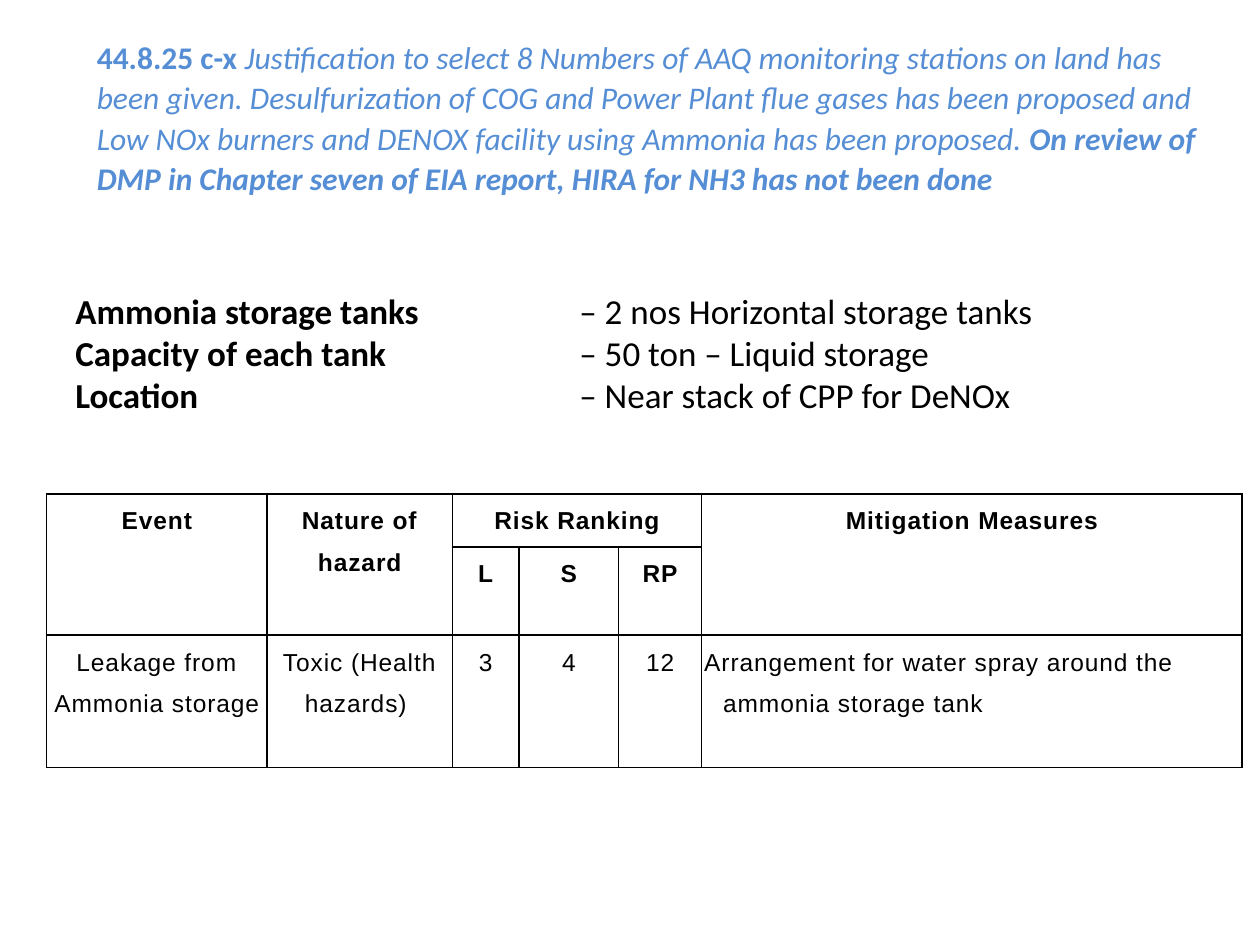
from dataclasses import dataclass

from lxml import etree
from pptx import Presentation
from pptx import util as u
from pptx.dml.color import RGBColor
from pptx.enum import text
from pptx.oxml import ns


@dataclass(frozen=True)
class Theme:
    ink: str = "000000"
    blue: str = "558ED5"
    body_font: str = "Calibri"
    table_font: str = "Arial"
    comment_size: int = 18
    fact_size: int = 20
    table_size: int = 14
    border: float = 1


THEME = Theme()

COMMENT = [
    ("44.8.25 c-x ", True, False),
    ("Justification to select 8 Numbers of AAQ monitoring stations on land has been given. "
     "Desulfurization of COG and Power Plant flue gases has been proposed and Low NOx burners "
     "and DENOX facility using Ammonia has been proposed. ", False, True),
    ("On review of DMP in Chapter seven of EIA report, HIRA for NH3 has not been done", True, True),
]
FACTS = [
    ("Ammonia storage tanks", "– 2 nos Horizontal storage tanks"),
    ("Capacity of each tank", "– 50 ton – Liquid storage"),
    ("Location", "– Near stack of CPP for DeNOx"),
]
RISKS = [
    ["Event", "Nature of hazard", "Risk Ranking", "", "", "Mitigation Measures"],
    ["", "", "L", "S", "RP", ""],
    ["Leakage from Ammonia storage", "Toxic (Health hazards) ", "3", "4", "12",
     "Arrangement for water spray around the ammonia storage tank"],
]
HEADER_ROWS = 2
MERGES = [((0, 0), (1, 0)), ((0, 1), (1, 1)), ((0, 2), (0, 4)), ((0, 5), (1, 5))]
COLUMN_WIDTHS = [1.75, 1.47, 0.53, 0.79, 0.66, 4.29]
ROW_HEIGHTS = [0.42, 0.7, 1.05]


def add_span(para, words, font, size, color, bold=False, italic=False):
    span = para.add_run()
    span.text = words
    span.font.name = font
    span.font.size = u.Pt(size)
    span.font.bold = bold
    span.font.italic = italic
    span.font.color.rgb = RGBColor.from_string(color)
    return span


def add_text_frame(page, left, top, width, height):
    box = page.shapes.add_textbox(*map(u.Inches, (left, top, width, height)))
    box.text_frame.word_wrap = True
    return box.text_frame


def add_comment(page):
    para = add_text_frame(page, 0.67, 0.23, 9.08, 1.38).paragraphs[0]
    para.line_spacing = 1.07
    para.space_after = u.Pt(8)
    for words, bold, italic in COMMENT:
        add_span(para, words, THEME.body_font, THEME.comment_size, THEME.blue, bold, italic)


def add_facts(page):
    frame = add_text_frame(page, 0.5, 2.25, 9.25, 1.11)
    for index, (label, value) in enumerate(FACTS):
        para = frame.add_paragraph() if index else frame.paragraphs[0]
        stops = etree.SubElement(para._p.get_or_add_pPr(), ns.qn("a:tabLst"))
        etree.SubElement(stops, ns.qn("a:tab"), pos=str(u.Inches(4)), algn="l")
        add_span(para, label, THEME.body_font, THEME.fact_size, THEME.ink, bold=True)
        add_span(para, "\t" + value, THEME.body_font, THEME.fact_size, THEME.ink)


def draw_borders(cell):
    properties = cell._tc.get_or_add_tcPr()
    for side in ("lnL", "lnR", "lnT", "lnB"):
        line = etree.SubElement(properties, ns.qn("a:" + side), w=str(u.Pt(THEME.border)))
        fill = etree.SubElement(line, ns.qn("a:solidFill"))
        etree.SubElement(fill, ns.qn("a:srgbClr"), val=THEME.ink)


def fill_cell(cell, words, header, measure):
    cell.margin_left = cell.margin_right = u.Inches(0.02)
    cell.margin_top = cell.margin_bottom = 0
    draw_borders(cell)
    cell.fill.background()
    if not words:
        return
    para = cell.text_frame.paragraphs[0]
    para.line_spacing = 1.5
    if measure:
        properties = para._p.get_or_add_pPr()
        properties.set("marL", str(u.Inches(0.15)))
        properties.set("indent", str(u.Inches(-0.15)))
    else:
        para.alignment = text.PP_ALIGN.CENTER
    span = add_span(para, words, THEME.table_font, THEME.table_size, THEME.ink, header)
    span.font._element.set("spc", "50")


def add_risk_table(page):
    frame = page.shapes.add_table(
        len(RISKS), len(COLUMN_WIDTHS), u.Inches(0.37), u.Inches(3.92),
        u.Inches(sum(COLUMN_WIDTHS)), u.Inches(sum(ROW_HEIGHTS)))
    table = frame.table
    table.first_row = table.horz_banding = False
    for column, width in zip(table.columns, COLUMN_WIDTHS):
        column.width = u.Inches(width)
    for row, height in zip(table.rows, ROW_HEIGHTS):
        row.height = u.Inches(height)
    for start, end in MERGES:
        table.cell(*start).merge(table.cell(*end))
    last = len(COLUMN_WIDTHS) - 1
    for r, row in enumerate(RISKS):
        header = r < HEADER_ROWS
        for c, words in enumerate(row):
            fill_cell(table.cell(r, c), words, header, c == last and not header)


def main():
    deck = Presentation()
    deck.slide_width, deck.slide_height = u.Inches(10), u.Inches(7.5)
    page = deck.slides.add_slide(deck.slide_layouts[6])
    add_facts(page)
    add_risk_table(page)
    add_comment(page)
    deck.save("out.pptx")


if __name__ == "__main__":
    main()
